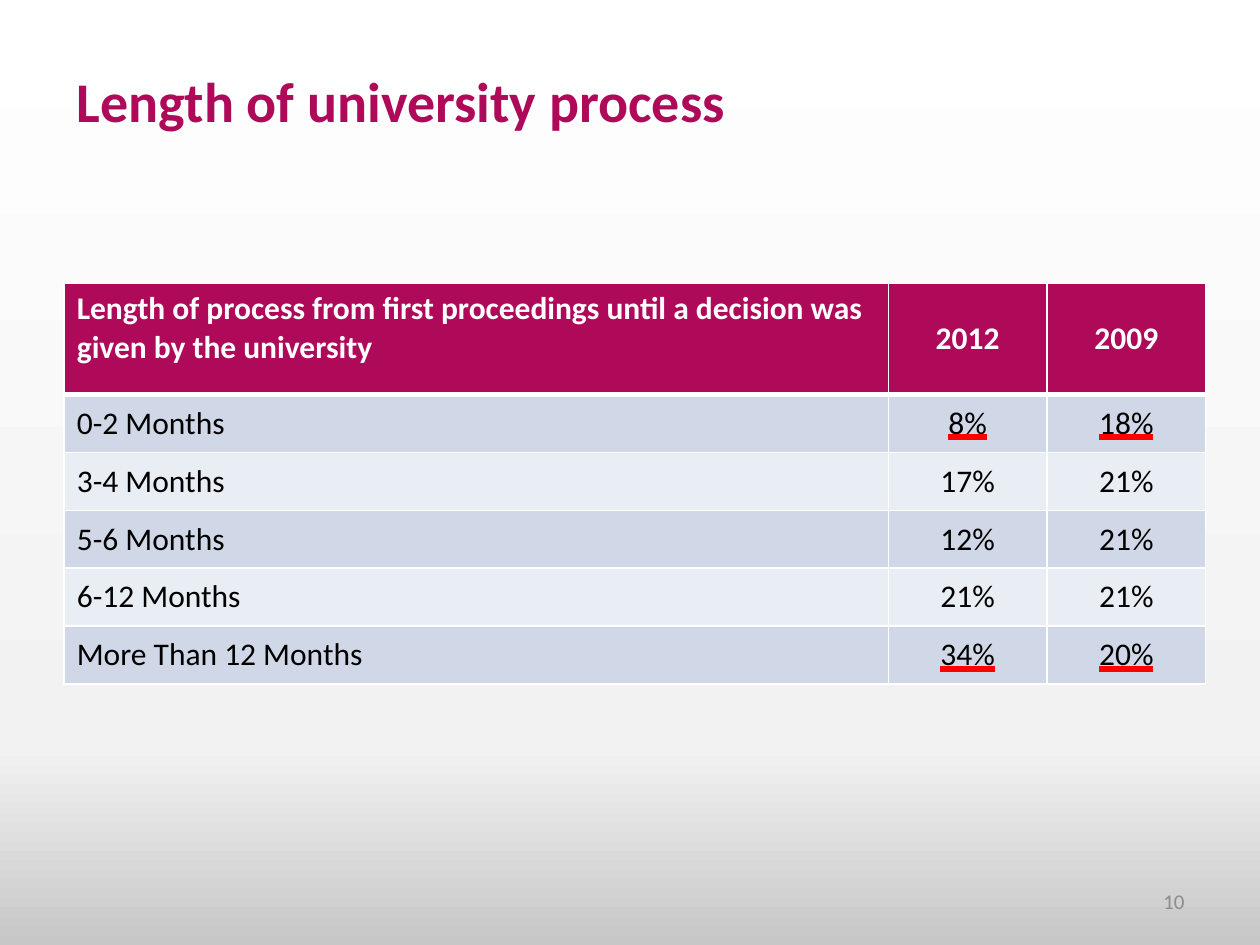
from lxml.etree import SubElement
from pptx import Presentation
from pptx.dml.color import RGBColor
from pptx.enum.text import MSO_ANCHOR, MSO_UNDERLINE, PP_ALIGN
from pptx.oxml import parse_xml
from pptx.oxml.ns import nsdecls, qn
from pptx.util import Inches, Pt

WIDTH, HEIGHT = 10, 7.5
LEFT = 0.51
MAGENTA, WHITE, BLACK, RED = "AF0A5A", "FFFFFF", "000000", "FF0000"
BANDS = ("D0D8E8", "E9EDF4")
COLUMNS = (6.54, 1.26, 1.26)
HEADER_HEIGHT, ROW_HEIGHT = 0.88, 0.46
HEADER = ("Length of process from first proceedings until a decision was given by the university",
          "2012", "2009")
DURATIONS = (
    ("0-2 Months", "8%", "18%"),
    ("3-4 Months", "17%", "21%"),
    ("5-6 Months", "12%", "21%"),
    ("6-12 Months", "21%", "21%"),
    ("More Than 12 Months", "34%", "20%"),
)
UNDERLINED_ROWS = (1, len(DURATIONS))


def rgb(value):
    """Turn a hex string into a colour."""
    return RGBColor.from_string(value)


def solid_xml(tag, color):
    """Return an element that wraps a solid fill."""
    return parse_xml(f'<a:{tag} {nsdecls("a")}><a:solidFill><a:srgbClr val="{color}"/>'
                     f'</a:solidFill></a:{tag}>')


def set_background(s, stops):
    """Paint a vertical gradient of (position, colour) stops."""
    fill = s.background.fill
    fill.gradient()
    fill.gradient_angle = 270
    stop_list = s.element.find(".//" + qn("a:gsLst"))
    for stop in list(stop_list):
        stop_list.remove(stop)
    for position, color in stops:
        stop = SubElement(stop_list, qn("a:gs"), pos=str(position * 1000))
        SubElement(stop, qn("a:srgbClr"), val=color)


def write(tf, text, size, color, bold=False, align=PP_ALIGN.LEFT):
    """Write one run into the first paragraph and return it."""
    p = tf.paragraphs[0]
    p.alignment = align
    r = p.add_run()
    r.text = text
    r.font.name = "Calibri"
    r.font.size = Pt(size)
    r.font.bold = bold
    r.font.color.rgb = rgb(color)
    return r


def add_text(s, box, text, size, color, **style):
    """Add a wrapped, vertically centred text box."""
    tf = s.shapes.add_textbox(*map(Inches, box)).text_frame
    tf.word_wrap = True
    tf.vertical_anchor = MSO_ANCHOR.MIDDLE
    write(tf, text, size, color, **style)


def underline_red(r):
    """Give a run a heavy red underline."""
    r.font.underline = MSO_UNDERLINE.HEAVY_LINE
    r.font._element.find(qn("a:latin")).addprevious(solid_xml("uFill", RED))


def set_borders(cell, top, bottom):
    """Draw white borders, with the given top and bottom widths."""
    tc_pr = cell._tc.get_or_add_tcPr()
    for i, (tag, width) in enumerate((("lnL", 1), ("lnR", 1), ("lnT", top), ("lnB", bottom))):
        line = solid_xml(tag, WHITE)
        line.set("w", str(Pt(width)))
        tc_pr.insert(i, line)


def fill_cell(cell, text, row, column):
    """Style and fill one cell by its place in the table."""
    header = row == 0
    cell.fill.solid()
    cell.fill.fore_color.rgb = rgb(MAGENTA if header else BANDS[(row - 1) % 2])
    set_borders(cell, 3 if row == 1 else 1, 3 if header else 1)
    cell.vertical_anchor = MSO_ANCHOR.TOP if header and column == 0 else MSO_ANCHOR.MIDDLE
    r = write(cell.text_frame, text, 18, WHITE if header else BLACK, bold=header,
              align=PP_ALIGN.CENTER if column else PP_ALIGN.LEFT)
    if column and row in UNDERLINED_ROWS:
        underline_red(r)


def add_durations(s):
    """Add the table of process lengths."""
    rows = (HEADER, *DURATIONS)
    heights = (HEADER_HEIGHT, *[ROW_HEIGHT] * len(DURATIONS))
    box = (LEFT, HEIGHT * 0.3, sum(COLUMNS), sum(heights))
    table = s.shapes.add_table(len(rows), len(COLUMNS), *map(Inches, box)).table
    for column, width in zip(table.columns, COLUMNS):
        column.width = Inches(width)
    for i, (height, texts) in enumerate(zip(heights, rows)):
        table.rows[i].height = Inches(height)
        for j, text in enumerate(texts):
            fill_cell(table.cell(i, j), text, i, j)


def main():
    """Build the slide and save it."""
    prs = Presentation()
    prs.slide_width, prs.slide_height = Inches(WIDTH), Inches(HEIGHT)
    s = prs.slides.add_slide(prs.slide_layouts[6])
    set_background(s, ((0, WHITE), (79, "F2F2F2"), (100, "C7C7C7")))
    add_text(s, (LEFT, 0.44, 6.46, 0.71), "Length of university process", 32, MAGENTA, bold=True)
    add_durations(s)
    add_text(s, (7.17, 6.95, 2.33, 0.4), "10", 12, "8C8C8C", align=PP_ALIGN.RIGHT)
    prs.save("out.pptx")


if __name__ == "__main__":
    main()
